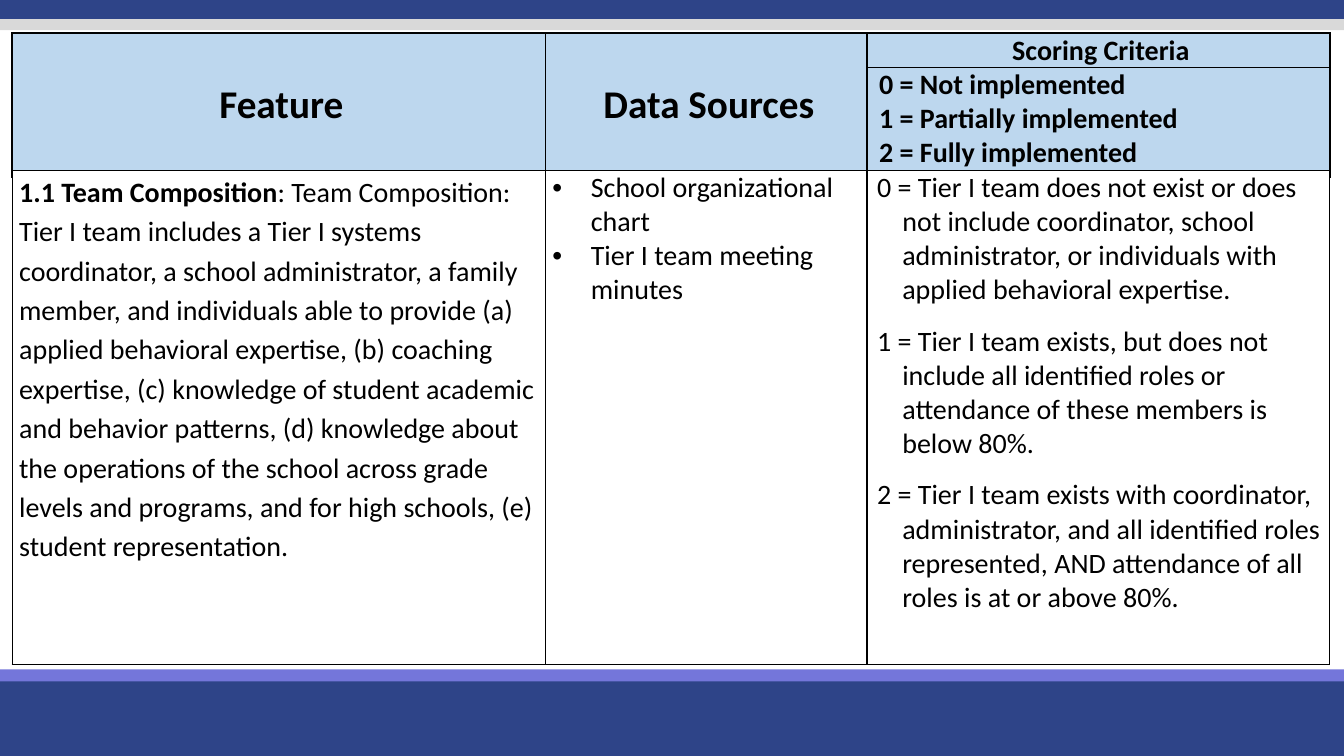
"""Build the Tier I team composition scoring slide."""
from lxml.etree import SubElement
from pptx import Presentation
from pptx.dml.color import RGBColor
from pptx.enum.shapes import MSO_SHAPE as Shape
from pptx.enum.text import MSO_ANCHOR as Anchor, PP_ALIGN as Align
from pptx.oxml.ns import qn
from pptx.util import Inches, Pt

COLORS = {"navy": "2E4488", "violet": "7476DA", "gray": "D9D9D9",
          "header": "BDD7EE", "white": "FFFFFF", "black": "000000"}
COLUMNS = (5.29, 3.19, 4.59)
TABLE_LEFT = 0.12
HEADER_INDENT = (0.36, -0.31)
BULLET_INDENT = (0.38, -0.38)
SCORE_INDENT = (0.28, -0.25)
SCORES = (
    "0 = Tier I team does not exist or does not include coordinator, school "
    "administrator, or individuals with applied behavioral expertise.",
    "1 = Tier I team exists, but does not include all identified roles or "
    "attendance of these members is below 80%.",
    "2 = Tier I team exists with coordinator, administrator, and all identified "
    "roles represented, AND attendance of all roles is at or above 80%.",
)
FEATURE = (
    ": Team Composition: Tier I team includes a Tier I systems coordinator, a "
    "school administrator, a family member, and individuals able to provide (a) "
    "applied behavioral expertise, (b) coaching expertise, (c) knowledge of "
    "student academic and behavior patterns, (d) knowledge about the operations "
    "of the school across grade levels and programs, and for high schools, (e) "
    "student representation."
)


def color(name):
    """Return a named color."""
    return RGBColor.from_string(COLORS[name])


def add_band(page, top, height, fill):
    """Add a full-width color band."""
    band = page.shapes.add_shape(
        Shape.RECTANGLE, 0, Inches(top), Inches(13.33), Inches(height))
    band.shadow.inherit = False
    band.fill.solid()
    band.fill.fore_color.rgb = color(fill)
    band.line.fill.background()


def add_borders(cell, widths):
    """Draw the left, right, top and bottom borders of a cell."""
    properties = cell._tc.get_or_add_tcPr()
    for side, width in zip("LRTB", widths):
        line = SubElement(properties, qn(f"a:ln{side}"), w=str(Pt(width)))
        fill = SubElement(line, qn("a:solidFill"))
        SubElement(fill, qn("a:srgbClr"), val=COLORS["black"])


def add_table(page, top, heights, fill, widths):
    """Add a bordered table with the shared columns and return it."""
    table = page.shapes.add_table(
        len(heights), len(COLUMNS), Inches(TABLE_LEFT), Inches(top),
        Inches(sum(COLUMNS)), Inches(sum(heights))).table
    table.first_row = table.horz_banding = False
    for column, width in zip(table.columns, COLUMNS):
        column.width = Inches(width)
    for row, height in zip(table.rows, heights):
        row.height = Inches(height)
    margins = {"margin_left": Inches(0.07), "margin_right": Inches(0.07),
               "margin_top": 0, "margin_bottom": 0}
    for cell in table.iter_cells():
        add_borders(cell, widths)
        cell.fill.solid()
        cell.fill.fore_color.rgb = color(fill)
        for name, value in margins.items():
            setattr(cell, name, value)
    return table


def write_cell(cell, lines, indent=(0, 0), bullet=None, size=20, bold=False,
               anchor=Anchor.TOP, **formats):
    """Write lines, each a string or a list of (text, bold) spans."""
    cell.vertical_anchor = anchor
    frame = cell.text_frame
    for index, line in enumerate(lines):
        para = frame.add_paragraph() if index else frame.paragraphs[0]
        properties = para._p.get_or_add_pPr()
        for name, value in zip(("marL", "indent"), indent):
            properties.set(name, str(Inches(value)))
        if bullet:
            SubElement(properties, qn("a:buFont"), typeface="Arial")
            SubElement(properties, qn("a:buChar"), char=bullet)
        for name, value in formats.items():
            setattr(para, name, value)
        spans = [(line, bold)] if isinstance(line, str) else line
        for text, weight in spans:
            span = para.add_run()
            span.text = text
            font = {"name": "Calibri", "size": Pt(size), "bold": weight}
            for name, value in font.items():
                setattr(span.font, name, value)
            span.font.color.rgb = color("black")


def add_header(page):
    """Add the heading table."""
    table = add_table(page, 0.33, (0.25, 1.09), "header", (1.5, 1.5, 1.5, 1))
    for column in range(2):
        table.cell(0, column).merge(table.cell(1, column))
    titles = (("Feature", 28), ("Data Sources", 28), ("Scoring Criteria", 20))
    for column, (title, size) in enumerate(titles):
        write_cell(table.cell(0, column), [title], HEADER_INDENT, size=size,
                   bold=True, anchor=Anchor.MIDDLE, alignment=Align.CENTER)
    levels = ("Not", "Partially", "Fully")
    write_cell(table.cell(1, 2),
               [f"{score} = {level} implemented" for score, level in enumerate(levels)],
               HEADER_INDENT, bold=True)


def add_details(page):
    """Add the table describing feature 1.1."""
    table = add_table(page, 1.69, (4.9,), "white", (1, 1, 1, 1))
    feature, sources, criteria = table.rows[0].cells
    write_cell(feature, [[("1.1 Team Composition", True), (FEATURE, False)]],
               line_spacing=1.15)
    write_cell(sources, ["School organizational chart", "Tier I team meeting minutes"],
               BULLET_INDENT, bullet="•")
    write_cell(criteria, SCORES, SCORE_INDENT, space_after=Pt(12))


def main():
    """Build and save the deck."""
    deck = Presentation()
    deck.slide_width, deck.slide_height = Inches(13.33), Inches(7.5)
    page = deck.slides.add_slide(deck.slide_layouts[6])
    bands = ((6.7, 0.8, "navy"), (6.64, 0.12, "violet"),
             (-0.03, 0.22, "navy"), (0.19, 0.11, "gray"))
    for top, height, fill in bands:
        add_band(page, top, height, fill)
    add_header(page)
    add_details(page)
    deck.save("out.pptx")


if __name__ == "__main__":
    main()
